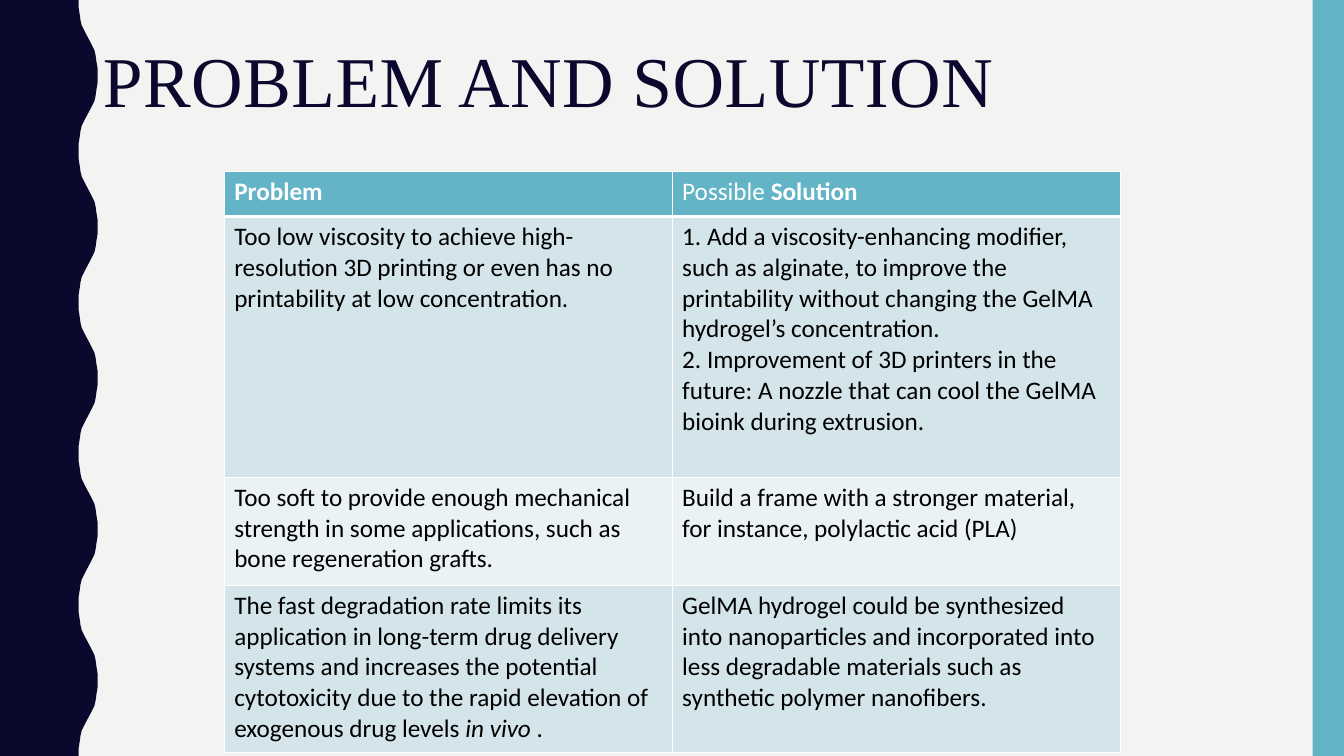
import lxml.etree
import pptx
import pptx.dml.color
import pptx.enum.shapes
import pptx.enum.text
import pptx.oxml.ns
import pptx.util

Cm = pptx.util.Cm
Pt = pptx.util.Pt

COLORS = {
    "paper": "F3F3F2",
    "navy": "0B082E",
    "teal": "62B4C6",
    "band_dark": "D3E5EA",
    "band_light": "EAF2F5",
    "white": "FFFFFF",
    "black": "000000",
}
PLAIN, BOLD, ITALIC = "plain", "bold", "italic"
WAVE_COUNT = 5
WAVE_QUARTER = [(1.98, 0), (1.98, 0.18), (2.01, 0.36), (2.03, 0.51),
                (2.06, 0.64), (2.11, 0.74), (2.16, 0.84)]
ROW_HEIGHTS = [1.14, 6.57, 2.72, 4.22]
ROWS = [
    ([[("Problem", BOLD)]],
     [[("Possible", PLAIN), (" Solution", BOLD)]]),
    ([[("Too low viscosity to achieve high-resolution 3D printing or even has "
        "no printability at low concentration.", PLAIN)]],
     [[("1. Add a viscosity-enhancing modifier, such as alginate, to improve "
        "the printability without changing the GelMA hydrogel’s "
        "concentration.", PLAIN)],
      [("2. Improvement of 3D printers in the future: A nozzle that can cool "
        "the GelMA bioink during extrusion.", PLAIN)]]),
    ([[("Too soft to provide enough mechanical strength in some applications, "
        "such as bone regeneration grafts.", PLAIN)]],
     [[("Build a frame with a stronger material, for instance, polylactic "
        "acid (PLA)", PLAIN)]]),
    ([[("The fast degradation rate limits its application in long-term drug "
        "delivery systems and increases the potential cytotoxicity due to the "
        "rapid elevation of exogenous drug levels ", PLAIN),
       ("in vivo", ITALIC), (" .", PLAIN)]],
     [[("GelMA hydrogel could be synthesized into nanoparticles and "
        "incorporated into less degradable materials such as synthetic "
        "polymer nanofibers.", PLAIN)]]),
]


def color(name):
    """Return the named colour as an RGB value."""
    return pptx.dml.color.RGBColor.from_string(COLORS[name])


def paint(shape, name):
    """Give a shape a flat fill without outline or shadow."""
    shape.fill.solid()
    shape.fill.fore_color.rgb = color(name)
    shape.line.fill.background()
    shape.shadow.inherit = False


def add_wave(page, left, top, height):
    """Draw the navy band with its wavy right edge."""
    period = height / WAVE_COUNT
    crest = [(4.44 - x, period / 2 - y) for x, y in reversed(WAVE_QUARTER)]
    rise = WAVE_QUARTER + crest
    wave = rise + [(x, period - y) for x, y in reversed(rise)]
    edge = [(x, y + index * period) for index in range(WAVE_COUNT) for x, y in wave]
    points = [(Cm(left + x), Cm(top + y)) for x, y in edge + [(0, height)]]
    builder = page.shapes.build_freeform(Cm(left), Cm(top))
    builder.add_line_segments(points, close=True)
    paint(builder.convert_to_shape(), "navy")


def add_side_bar(page, left, top, width, height):
    """Draw the teal bar at the right edge."""
    bar = page.shapes.add_shape(pptx.enum.shapes.MSO_SHAPE.RECTANGLE,
                                Cm(left), Cm(top), Cm(width), Cm(height))
    paint(bar, "teal")


def add_title(page, text, left, top, width, height):
    """Place and format the title placeholder."""
    title = page.shapes.title
    title.left, title.top = Cm(left), Cm(top)
    title.width, title.height = Cm(width), Cm(height)
    frame = title.text_frame
    frame.vertical_anchor = pptx.enum.text.MSO_ANCHOR.TOP
    frame.word_wrap = True
    para = frame.paragraphs[0]
    para.alignment = pptx.enum.text.PP_ALIGN.LEFT
    para.line_spacing = 0.9
    para.font.name = "Times New Roman"
    para.font.size = Pt(51)
    para.font.color.rgb = color("navy")
    span = para.add_run()
    span.text = text
    span.font._element.set("spc", "40")


def add_borders(cell, bottom_width):
    """Line a cell in white, with its own width at the bottom."""
    properties = cell._tc.get_or_add_tcPr()
    for index, side in enumerate(["lnL", "lnR", "lnT", "lnB"]):
        width = Pt(bottom_width if side == "lnB" else 1)
        line = lxml.etree.Element(pptx.oxml.ns.qn("a:" + side), w=str(width))
        fill = lxml.etree.SubElement(line, pptx.oxml.ns.qn("a:solidFill"))
        lxml.etree.SubElement(fill, pptx.oxml.ns.qn("a:srgbClr"), val=COLORS["white"])
        properties.insert(index, line)


def fill_cell(cell, paragraphs, fill, ink, bottom_width):
    """Write one cell's paragraphs and set its colours and borders."""
    cell.fill.solid()
    cell.fill.fore_color.rgb = color(fill)
    add_borders(cell, bottom_width)
    frame = cell.text_frame
    for index, spans in enumerate(paragraphs):
        para = frame.add_paragraph() if index else frame.paragraphs[0]
        para.font.name = "Calibri"
        para.font.size = Pt(18)
        para.font.color.rgb = color(ink)
        for text, style in spans:
            span = para.add_run()
            span.text = text
            span.font.bold = style == BOLD
            span.font.italic = style == ITALIC


def add_solution_table(page, left, top, width):
    """Build the table of problems and possible solutions."""
    frame = page.shapes.add_table(len(ROWS), 2, Cm(left), Cm(top),
                                  Cm(width), Cm(sum(ROW_HEIGHTS)))
    table = frame.table
    for row, height in zip(table.rows, ROW_HEIGHTS):
        row.height = Cm(height)
    for row_index, texts in enumerate(ROWS):
        if row_index == 0:
            look = ("teal", "white", 3)
        else:
            look = ("band_dark" if row_index % 2 else "band_light", "black", 1)
        for column_index, paragraphs in enumerate(texts):
            fill_cell(table.cell(row_index, column_index), paragraphs, *look)


def main():
    """Build the slide and save the deck."""
    deck = pptx.Presentation()
    deck.slide_width, deck.slide_height = Cm(33.87), Cm(19.05)
    page = deck.slides.add_slide(deck.slide_layouts[5])
    page.background.fill.solid()
    page.background.fill.fore_color.rgb = color("paper")
    add_wave(page, 0, 0, 19.05)
    add_side_bar(page, 33.08, 0, 0.79, 19.05)
    add_title(page, "PROBLEM AND SOLUTION", 2.34, 1.04, 29.21, 3.68)
    add_solution_table(page, 5.65, 4.32, 22.58)
    deck.save("out.pptx")


if __name__ == "__main__":
    main()
